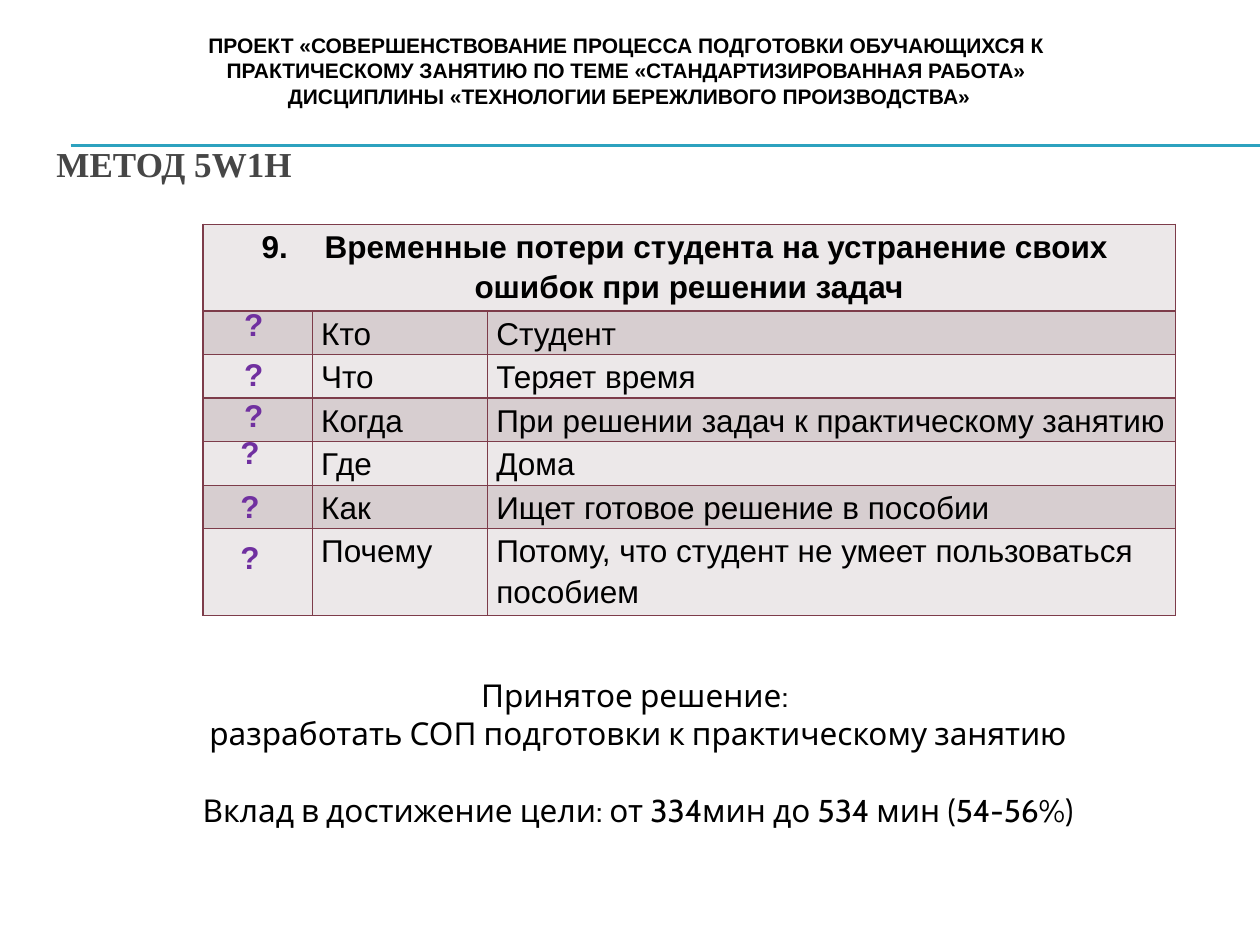
from lxml import etree
from pptx import Presentation
from pptx.dml.color import RGBColor
from pptx.enum.shapes import MSO_CONNECTOR as CONN
from pptx.enum.text import MSO_ANCHOR as ANCHOR, PP_ALIGN as ALIGN
from pptx.oxml.ns import qn
from pptx.util import Inches, Pt

COLORS = {"rule": "2DA2BF", "title": "464646", "text": "000000", "mark": "7030A0",
          "border": "7D3C4A", "light": "ECE8E9", "dark": "D7CED0"}
FORMATS = {
    "title": {"name": "Times New Roman", "size": Pt(20), "bold": True},
    "heading": {"name": "Arial", "size": Pt(12), "bold": True},
    "decision": {"name": "Cabin", "size": Pt(18)},
    "cell": {"name": "Arial", "size": Pt(18), "bold": False},
    "strong": {"name": "Arial", "size": Pt(18), "bold": True},
}


def write(tf, lines, style, color="text", align=ALIGN.LEFT, spacing=None):
    """Fill a text frame with one formatted paragraph per line."""
    for i, line in enumerate(lines):
        p = tf.add_paragraph() if i else tf.paragraphs[0]
        p.alignment, p.line_spacing = align, spacing
        r = p.add_run()
        r.text = line
        for key, value in FORMATS[style].items():
            setattr(r.font, key, value)
        r.font.color.rgb = RGBColor.from_string(COLORS[color])


def add_text(box, lines, style, wrap=True, **options):
    tf = s.shapes.add_textbox(*map(Inches, box)).text_frame
    tf.word_wrap = wrap
    write(tf, lines, style, **options)
    return tf


prs = Presentation()
prs.slide_width, prs.slide_height = Inches(10), Inches(7.5)
s = prs.slides.add_slide(prs.slide_layouts[6])

# Double rule under the heading
for y in (1.15, 1.16):
    rule = s.shapes.add_connector(CONN.STRAIGHT, Inches(0.56), Inches(y),
                                  prs.slide_width, Inches(y))
    rule.line.color.rgb = RGBColor.from_string(COLORS["rule"])
    rule.line.width = Pt(0.75)
    etree.SubElement(rule._element.spPr, qn("a:effectLst"))

# Title, decision and project heading
title = add_text((0.35, 0.91, 3.56, 0.78), ["МЕТОД 5W1H"], "title", color="title")
title.vertical_anchor = ANCHOR.MIDDLE
decision = add_text((0.77, 5.32, 8.59, 1.3), [
    "Принятое решение: ",
    "разработать СОП подготовки к практическому занятию",
    "Вклад в достижение цели: от 334мин до 534 мин (54-56%)",
], "decision", align=ALIGN.CENTER)
decision.paragraphs[-1].space_before = Pt(22)
add_text((0.35, 0.21, 9.29, 0.71), [
    "ПРОЕКТ «СОВЕРШЕНСТВОВАНИЕ ПРОЦЕССА ПОДГОТОВКИ ОБУЧАЮЩИХСЯ К ",
    "ПРАКТИЧЕСКОМУ ЗАНЯТИЮ ПО ТЕМЕ «СТАНДАРТИЗИРОВАННАЯ РАБОТА» ",
    "ДИСЦИПЛИНЫ «ТЕХНОЛОГИИ БЕРЕЖЛИВОГО ПРОИЗВОДСТВА»",
], "heading", align=ALIGN.CENTER)

# Table: a merged problem row, then one row per question
problem = ["9.\tВременные потери студента на устранение своих ",
           "ошибок при решении задач"]
answers = [
    ("Кто", "Студент"),
    ("Что", "Теряет время"),
    ("Когда", "При решении задач к практическому занятию"),
    ("Где", "Дома"),
    ("Как", "Ищет готовое решение в пособии"),
    ("Почему", "Потому, что студент не умеет пользоваться пособием"),
]
col_widths = [0.87, 1.39, 5.46]
table_height = 3.1
line_counts = [2, 1, 1, 1, 1, 1, 2]
table = s.shapes.add_table(len(line_counts), len(col_widths), Inches(1.61), Inches(1.78),
                           Inches(sum(col_widths)), Inches(table_height)).table
for col, width in zip(table.columns, col_widths):
    col.width = Inches(width)
for i, (row, count) in enumerate(zip(table.rows, line_counts)):
    row.height = Inches(table_height * count / sum(line_counts))
    for cell in row.cells:
        cell.margin_left = cell.margin_right = Inches(0.07)
        cell.margin_top = cell.margin_bottom = 0
        tcPr = cell._tc.get_or_add_tcPr()
        for side in ("a:lnL", "a:lnR", "a:lnT", "a:lnB"):
            ln = etree.SubElement(tcPr, qn(side), w=str(Pt(1)))
            fill = etree.SubElement(ln, qn("a:solidFill"))
            etree.SubElement(fill, qn("a:srgbClr"), val=COLORS["border"])
        cell.fill.solid()
        cell.fill.fore_color.rgb = RGBColor.from_string(COLORS["dark" if i % 2 else "light"])
table.cell(0, 0).merge(table.cell(0, 2))
write(table.cell(0, 0).text_frame, problem, "strong", align=ALIGN.CENTER, spacing=1.15)
for i, answer in enumerate(answers, 1):
    for j, text in enumerate(answer, 1):
        write(table.cell(i, j).text_frame, [text], "cell", spacing=1.15)

# Question marks over the first column
for x, tops in ((1.84, (2.37, 2.77, 3.09)), (1.81, (3.39, 3.82, 4.22))):
    for y in tops:
        add_text((x, y, 0.36, 0.4), ["?"], "strong", wrap=False, color="mark")

prs.save("out.pptx")
